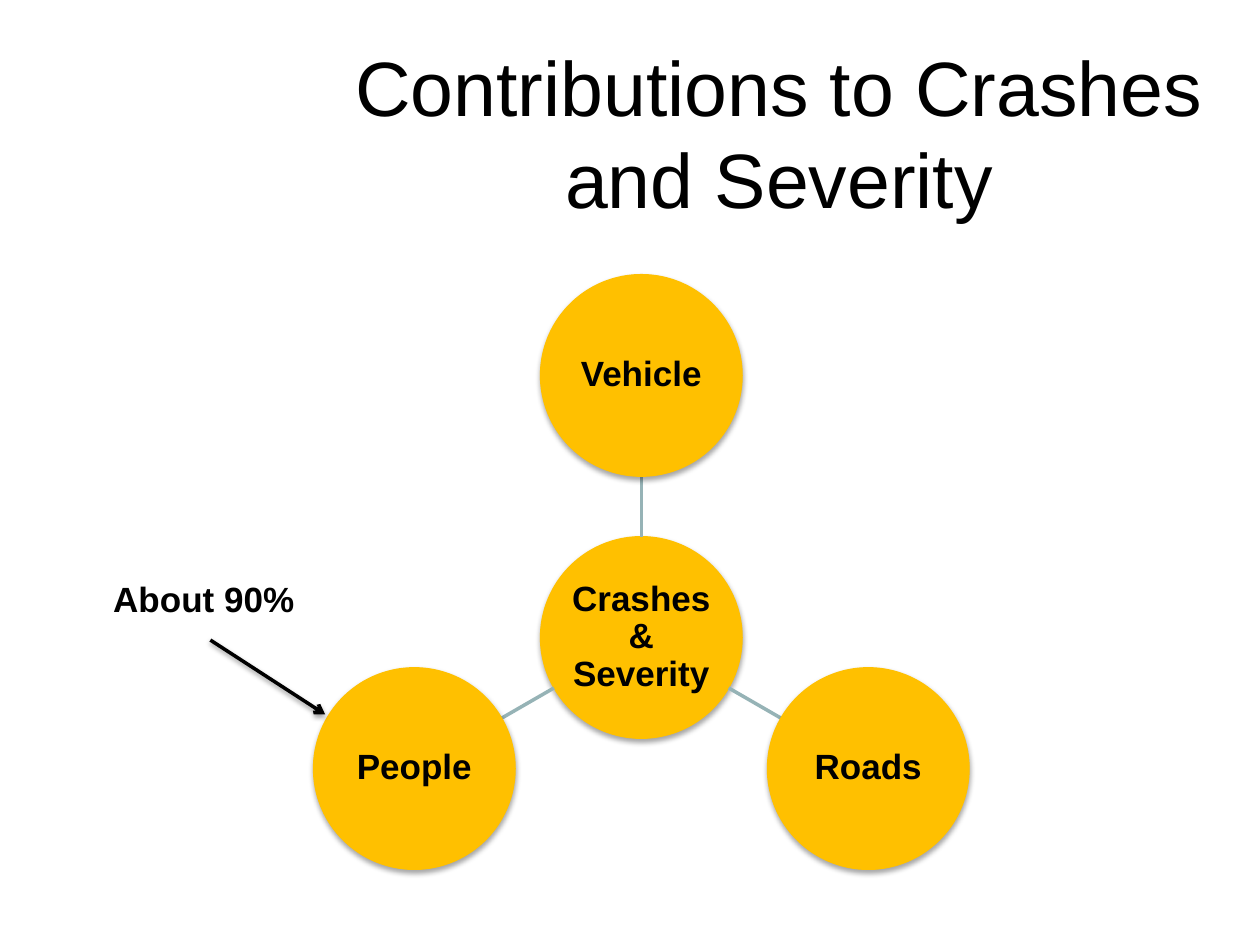
from dataclasses import dataclass
from math import cos, radians, sin

from lxml.etree import SubElement
from pptx import Presentation
from pptx.dml.color import RGBColor
from pptx.enum.shapes import MSO_CONNECTOR, MSO_SHAPE
from pptx.enum.text import MSO_ANCHOR, PP_ALIGN
from pptx.oxml.ns import qn
from pptx.util import Inches, Pt

COLORS = {"text": "000000", "circle": "FFC000", "spoke": "96B3B6", "background": "FFFFFF"}
FONT = "Arial"
HUB_X, HUB_Y = 5.09, 5.06
RADIUS = 0.8
ORBIT = 2.08


@dataclass
class Factor:
    label: str
    angle: float


@dataclass
class Label:
    text: str
    left: float
    top: float
    width: float
    height: float
    size: int
    bold: bool
    alignment: PP_ALIGN
    wrap: bool


FACTORS = [Factor("Vehicle", -90), Factor("Roads", 30), Factor("People", 150)]
LABELS = [
    Label("Contributions to Crashes and Severity", 2.6, 0.42, 7.17, 1.25, 44, False,
          PP_ALIGN.CENTER, True),
    Label("About 90%", 0.8, 4.53, 1.65, 0.44, 20, True, PP_ALIGN.LEFT, False),
]


def color(name: str) -> RGBColor:
    return RGBColor.from_string(COLORS[name])


def write_text(shape, text: str, size: int, bold: bool, alignment: PP_ALIGN):
    frame = shape.text_frame
    frame.vertical_anchor = MSO_ANCHOR.MIDDLE
    paragraph = frame.paragraphs[0]
    paragraph.text = text
    paragraph.alignment = alignment
    font = paragraph.font
    font.name, font.size, font.bold = FONT, Pt(size), bold
    font.color.rgb = color("text")
    return paragraph


def add_label(slide, label: Label) -> None:
    box = slide.shapes.add_textbox(Inches(label.left), Inches(label.top),
                                   Inches(label.width), Inches(label.height))
    box.text_frame.word_wrap = label.wrap
    write_text(box, label.text, label.size, label.bold, label.alignment)


def add_effects(shape, opacity: int = 0, distance: float = 0) -> None:
    """Replace the theme shadow with a downward one, or with none at zero opacity."""
    properties = shape._element.spPr
    effects = SubElement(properties, qn("a:effectLst"))
    if opacity:
        shadow = SubElement(effects, qn("a:outerShdw"), blurRad=str(Pt(3.1)),
                            dist=str(Pt(distance)), dir="5400000", rotWithShape="0")
        shade = SubElement(shadow, qn("a:srgbClr"), val=COLORS["text"])
        SubElement(shade, qn("a:alpha"), val=str(opacity * 1000))


def add_line(slide, start: tuple[float, float], end: tuple[float, float], color_name: str):
    line = slide.shapes.add_connector(MSO_CONNECTOR.STRAIGHT, Inches(start[0]), Inches(start[1]),
                                      Inches(end[0]), Inches(end[1]))
    line.line.color.rgb = color(color_name)
    line.line.width = Pt(2)
    return line


def add_circle(slide, center: tuple[float, float], text: str) -> None:
    circle = slide.shapes.add_shape(MSO_SHAPE.OVAL, Inches(center[0] - RADIUS),
                                    Inches(center[1] - RADIUS),
                                    Inches(2 * RADIUS), Inches(2 * RADIUS))
    circle.fill.solid()
    circle.fill.fore_color.rgb = color("circle")
    circle.line.color.rgb = color("circle")
    circle.line.width = Pt(0.75)
    add_effects(circle, opacity=35, distance=1.8)
    frame = circle.text_frame
    frame.word_wrap = True
    frame.margin_left = frame.margin_right = Inches(0.01)
    frame.margin_top = frame.margin_bottom = Inches(0.01)
    paragraph = write_text(circle, text, 20, True, PP_ALIGN.CENTER)
    paragraph.line_spacing = 0.9


def point_on_ray(angle: float, distance: float) -> tuple[float, float]:
    """Return the point at a distance from the hub centre, angles running clockwise."""
    return (HUB_X + distance * cos(radians(angle)), HUB_Y + distance * sin(radians(angle)))


def add_factor(slide, factor: Factor) -> None:
    spoke = add_line(slide, point_on_ray(factor.angle, RADIUS),
                     point_on_ray(factor.angle, ORBIT - RADIUS), "spoke")
    add_effects(spoke)
    add_circle(slide, point_on_ray(factor.angle, ORBIT), factor.label)


def add_arrow(slide) -> None:
    arrow = add_line(slide, (1.67, 5.08), (2.58, 5.67), "text")
    SubElement(arrow.line._get_or_add_ln(), qn("a:tailEnd"), type="arrow")
    add_effects(arrow, opacity=38, distance=1.6)


def main() -> None:
    presentation = Presentation()
    presentation.slide_width, presentation.slide_height = Inches(10), Inches(7.5)
    slide = presentation.slides.add_slide(presentation.slide_layouts[6])
    slide.background.fill.solid()
    slide.background.fill.fore_color.rgb = color("background")
    add_circle(slide, (HUB_X, HUB_Y), "Crashes & Severity")
    for factor in FACTORS:
        add_factor(slide, factor)
    add_arrow(slide)
    for label in LABELS:
        add_label(slide, label)
    presentation.save("out.pptx")


if __name__ == "__main__":
    main()
